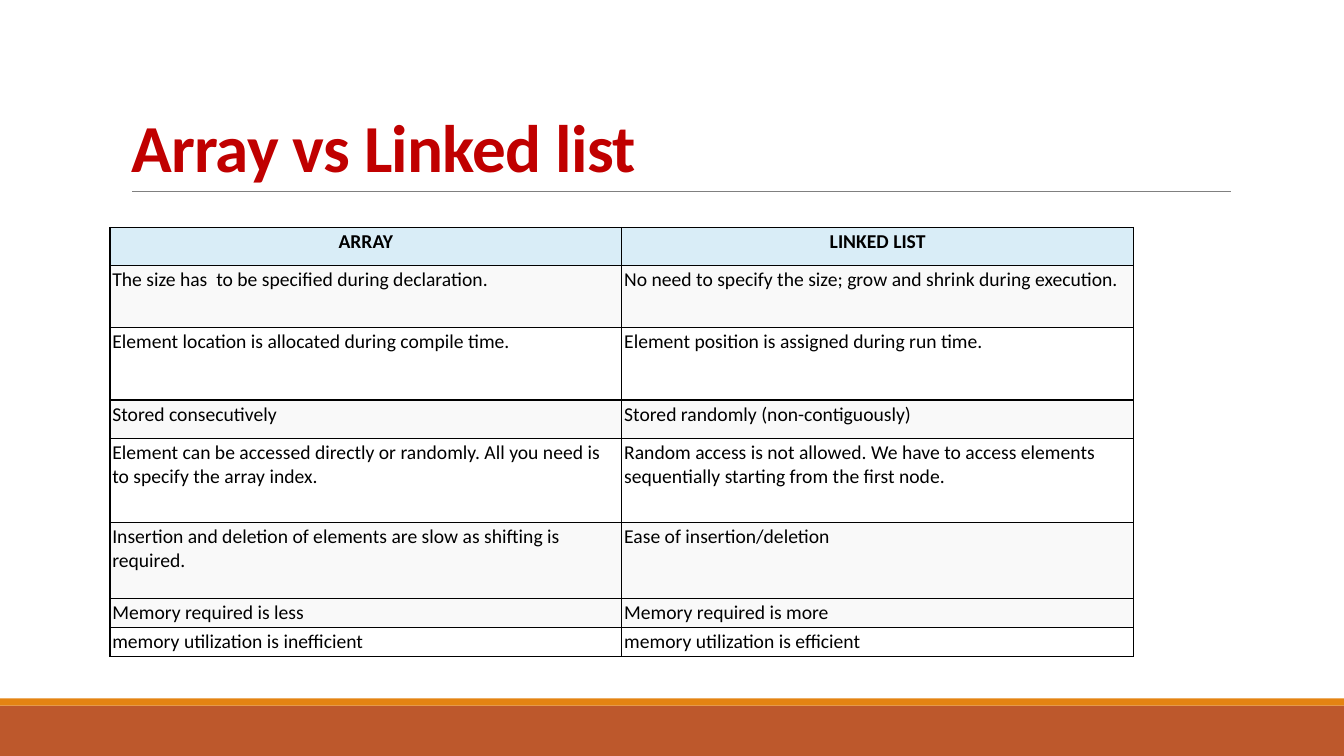
"""Builds a slide that compares arrays with linked lists in a table."""
from lxml.etree import SubElement
from pptx import Presentation
from pptx.dml.color import RGBColor
from pptx.enum.shapes import MSO_CONNECTOR, MSO_SHAPE
from pptx.enum.text import MSO_ANCHOR, PP_ALIGN
from pptx.oxml.ns import qn
from pptx.util import Cm, Pt

BLACK = RGBColor(0x00, 0x00, 0x00)
WHITE = RGBColor(0xFF, 0xFF, 0xFF)
RED = RGBColor(0xC0, 0x00, 0x00)
RUST = RGBColor(0xBD, 0x58, 0x2C)
ORANGE = RGBColor(0xE4, 0x83, 0x12)
GREY = RGBColor(0x80, 0x80, 0x80)
PALE_BLUE = RGBColor(0xD9, 0xED, 0xF7)
PALE_GREY = RGBColor(0xF9, 0xF9, 0xF9)

FONT = "Calibri"
COLUMN_WIDTH = 12.9
ROWS = [
    (0.97, PALE_BLUE, "ARRAY", "LINKED LIST"),
    (1.55, PALE_GREY, "The size has  to be specified during declaration.",
     "No need to specify the size; grow and shrink during execution."),
    (1.83, WHITE, "Element location is allocated during compile time.",
     "Element position is assigned during run time."),
    (0.97, PALE_GREY, "Stored consecutively", "Stored randomly (non-contiguously)"),
    (2.11, WHITE,
     "Element can be accessed directly or randomly. All you need is to specify the array index.",
     "Random access is not allowed. We have to access elements sequentially "
     "starting from the first node."),
    (1.93, PALE_GREY, "Insertion and deletion of elements are slow as shifting is required.",
     "Ease of insertion/deletion"),
    (0.73, PALE_GREY, "Memory required is less", "Memory required is more"),
    (0.73, WHITE, "memory utilization is inefficient", "memory utilization is efficient"),
]


def style_font(font, size, color, bold):
    font.name = FONT
    font.size = Pt(size)
    font.bold = bold
    font.color.rgb = color


def add_band(page, top, height, color):
    band = page.shapes.add_shape(MSO_SHAPE.RECTANGLE, 0, Cm(top), Cm(33.87), Cm(height))
    band.shadow.inherit = False
    band.fill.solid()
    band.fill.fore_color.rgb = color
    band.line.fill.background()


def add_rule(page, left, right, top):
    rule = page.shapes.add_connector(
        MSO_CONNECTOR.STRAIGHT, Cm(left), Cm(top), Cm(right), Cm(top))
    rule.line.color.rgb = GREY
    rule.line.width = Pt(0.5)
    SubElement(rule._element.spPr, qn("a:effectLst"))


def fill_title(page, text):
    title = page.shapes.title
    title.left, title.top, title.width, title.height = Cm(3.05), Cm(0.79), Cm(27.94), Cm(4.04)
    frame = title.text_frame
    frame.text = text
    frame.word_wrap = True
    frame.vertical_anchor = MSO_ANCHOR.BOTTOM
    paragraph = frame.paragraphs[0]
    paragraph.alignment = PP_ALIGN.LEFT
    paragraph.line_spacing = 0.85
    style_font(paragraph.font, 48, RED, True)
    paragraph.runs[0].font._element.set("spc", "-50")


def add_borders(cell):
    properties = cell._tc.get_or_add_tcPr()
    for position, side in enumerate(("lnL", "lnR", "lnT", "lnB")):
        border = SubElement(properties, qn(f"a:{side}"), w=str(Pt(1)))
        properties.insert(position, border)
        solid = SubElement(border, qn("a:solidFill"))
        SubElement(solid, qn("a:srgbClr"), val=str(BLACK))


def fill_cell(cell, text, color, header):
    cell.fill.solid()
    cell.fill.fore_color.rgb = color
    cell.margin_left = cell.margin_right = cell.margin_top = cell.margin_bottom = Cm(0.06)
    cell.text = text
    paragraph = cell.text_frame.paragraphs[0]
    paragraph.alignment = PP_ALIGN.CENTER if header else PP_ALIGN.LEFT
    style_font(paragraph.font, 14, BLACK, header)
    add_borders(cell)


def add_comparison(page, left, top):
    height = sum(row[0] for row in ROWS)
    table = page.shapes.add_table(
        len(ROWS), 2, Cm(left), Cm(top), Cm(2 * COLUMN_WIDTH), Cm(height)).table
    for column in table.columns:
        column.width = Cm(COLUMN_WIDTH)
    for index, (row_height, color, *texts) in enumerate(ROWS):
        table.rows[index].height = Cm(row_height)
        for cell, text in zip(table.rows[index].cells, texts):
            fill_cell(cell, text, color, index == 0)


def main():
    deck = Presentation()
    deck.slide_width, deck.slide_height = Cm(33.87), Cm(19.05)
    page = deck.slides.add_slide(deck.slide_layouts[5])
    add_band(page, 17.78, 1.27, RUST)
    add_band(page, 17.6, 0.18, ORANGE)
    add_rule(page, 3.33, 31.01, 4.83)
    fill_title(page, "Array vs Linked list")
    add_comparison(page, 2.77, 5.73)
    deck.save("out.pptx")


if __name__ == "__main__":
    main()
